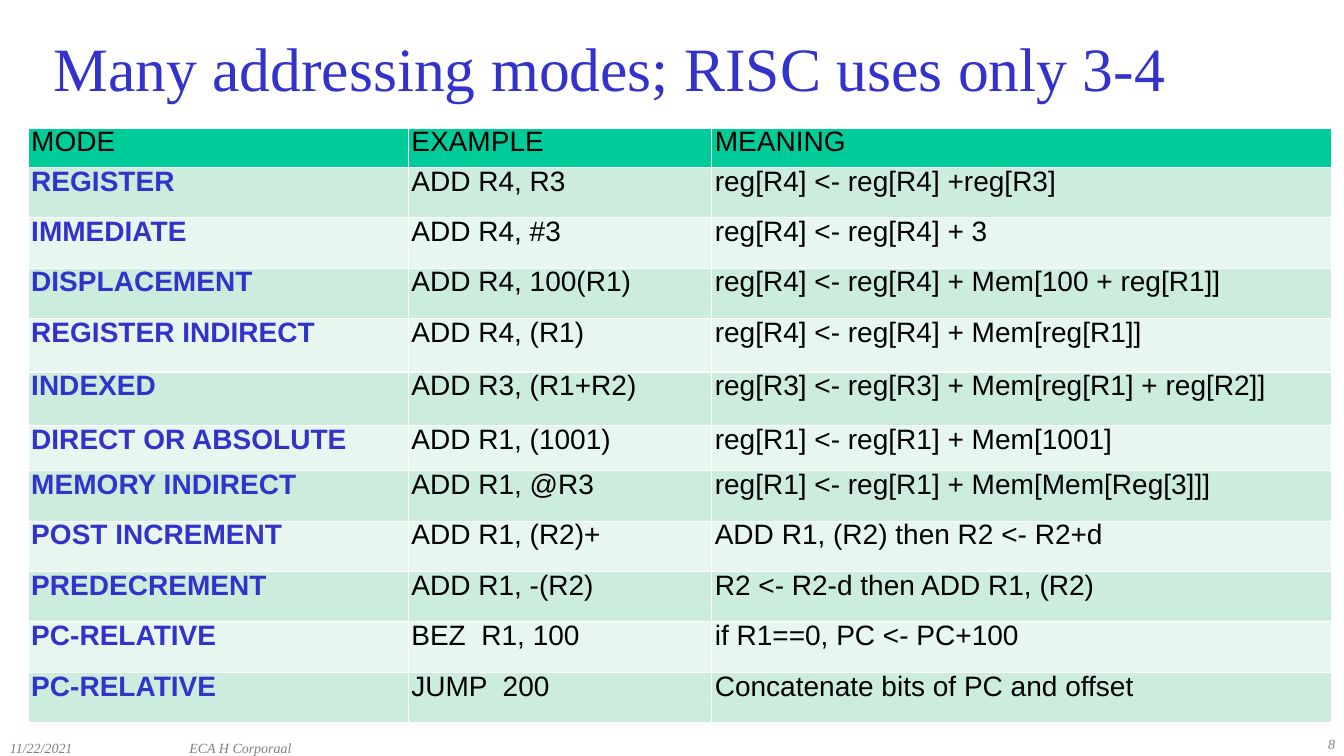
from pptx import Presentation
from pptx.dml.color import RGBColor as Color
from pptx.enum.text import MSO_ANCHOR as Anchor, PP_ALIGN as Align
from pptx.util import Inches, Pt

COLORS = {
    "title": "3333CC", "mode": "3333CC", "text": "000000", "footer": "7F7F7F",
    "header": "00CC99", "odd": "CCECDE", "even": "E7F6EF", "page": "FFFFFF",
}
MARGINS = ("margin_left", "margin_top", "margin_right", "margin_bottom")


def write(para, text, color, **font):
    span = para.add_run()
    span.text = text
    span.font.color.rgb = Color.from_string(COLORS[color])
    for name, value in font.items():
        setattr(span.font, name, value)


def set_margins(holder, *sizes):
    for name, size in zip(MARGINS, sizes):
        setattr(holder, name, Inches(size))


deck = Presentation()
deck.slide_width, deck.slide_height = Inches(13.33), Inches(7.5)
page = deck.slides.add_slide(deck.slide_layouts[6])
page.background.fill.solid()
page.background.fill.fore_color.rgb = Color.from_string(COLORS["page"])

serif = {"name": "Times New Roman"}
title_font = {**serif, "size": Pt(44)}
footer_font = {**serif, "size": Pt(10), "italic": True}
labels = [
    ("Many addressing modes; RISC uses only 3-4", (0.43, 0.25, 12.65, 0.83),
     0.1, Anchor.MIDDLE, Align.LEFT, "title", title_font),
    ("11/22/2021", (0, 7.25, 1.78, 0.25),
     0.1, Anchor.TOP, Align.LEFT, "footer", footer_font),
    ("ECA H Corporaal", (1.78, 7.25, 4.22, 0.25),
     0.1, Anchor.TOP, Align.LEFT, "footer", footer_font),
    ("8", (10.56, 7.25, 2.78, 0.25),
     0.05, Anchor.TOP, Align.RIGHT, "footer", footer_font),
]
for text, place, inset, anchor, align, color, font in labels:
    frame = page.shapes.add_textbox(*map(Inches, place)).text_frame
    frame.word_wrap = True
    frame.vertical_anchor = anchor
    set_margins(frame, 0.1, inset, 0.1, inset)
    para = frame.paragraphs[0]
    para.alignment = align
    write(para, text, color, **font)

modes = [
    ("MODE", "EXAMPLE", "MEANING"),
    ("REGISTER", "ADD R4, R3", "reg[R4] <- reg[R4] +reg[R3]"),
    ("IMMEDIATE", "ADD R4, #3", "reg[R4] <- reg[R4] + 3"),
    ("DISPLACEMENT", "ADD R4, 100(R1)", "reg[R4] <- reg[R4] + Mem[100 + reg[R1]]"),
    ("REGISTER INDIRECT", "ADD R4, (R1)", "reg[R4] <- reg[R4] + Mem[reg[R1]]"),
    ("INDEXED", "ADD R3, (R1+R2)", "reg[R3] <- reg[R3] + Mem[reg[R1] + reg[R2]]"),
    ("DIRECT OR ABSOLUTE", "ADD R1, (1001)", "reg[R1] <- reg[R1] + Mem[1001]"),
    ("MEMORY INDIRECT", "ADD R1, @R3", "reg[R1] <- reg[R1] + Mem[Mem[Reg[3]]]"),
    ("POST INCREMENT", "ADD R1, (R2)+", "ADD R1, (R2) then R2 <- R2+d"),
    ("PREDECREMENT", "ADD R1, -(R2)", "R2 <- R2-d then ADD R1, (R2)"),
    ("PC-RELATIVE", "BEZ  R1, 100", "if R1==0, PC <- PC+100"),
    ("PC-RELATIVE", "JUMP  200", "Concatenate bits of PC and offset"),
]
widths = (3.77, 3.01, 6.15)
special_heights = {0: 0.39, 4: 0.53, 5: 0.53, 6: 0.45}
heights = [special_heights.get(row, 0.5) for row in range(len(modes))]

table = page.shapes.add_table(
    len(modes), len(widths), Inches(0.28), Inches(1.27),
    Inches(sum(widths)), Inches(sum(heights))).table
for column, width in zip(table.columns, widths):
    column.width = Inches(width)
for row, (height, texts) in enumerate(zip(heights, modes)):
    table.rows[row].height = Inches(height)
    band = "header" if row == 0 else "odd" if row % 2 else "even"
    for col, text in enumerate(texts):
        cell = table.cell(row, col)
        cell.fill.solid()
        cell.fill.fore_color.rgb = Color.from_string(COLORS[band])
        set_margins(cell, 0.03, 0.1, 0.03, 0.02)
        para = cell.text_frame.paragraphs[0]
        para.line_spacing = Pt(14)
        is_mode = row > 0 and col == 0
        write(para, text, "mode" if is_mode else "text",
              name="Arial", size=Pt(20), bold=is_mode)

deck.save("out.pptx")
